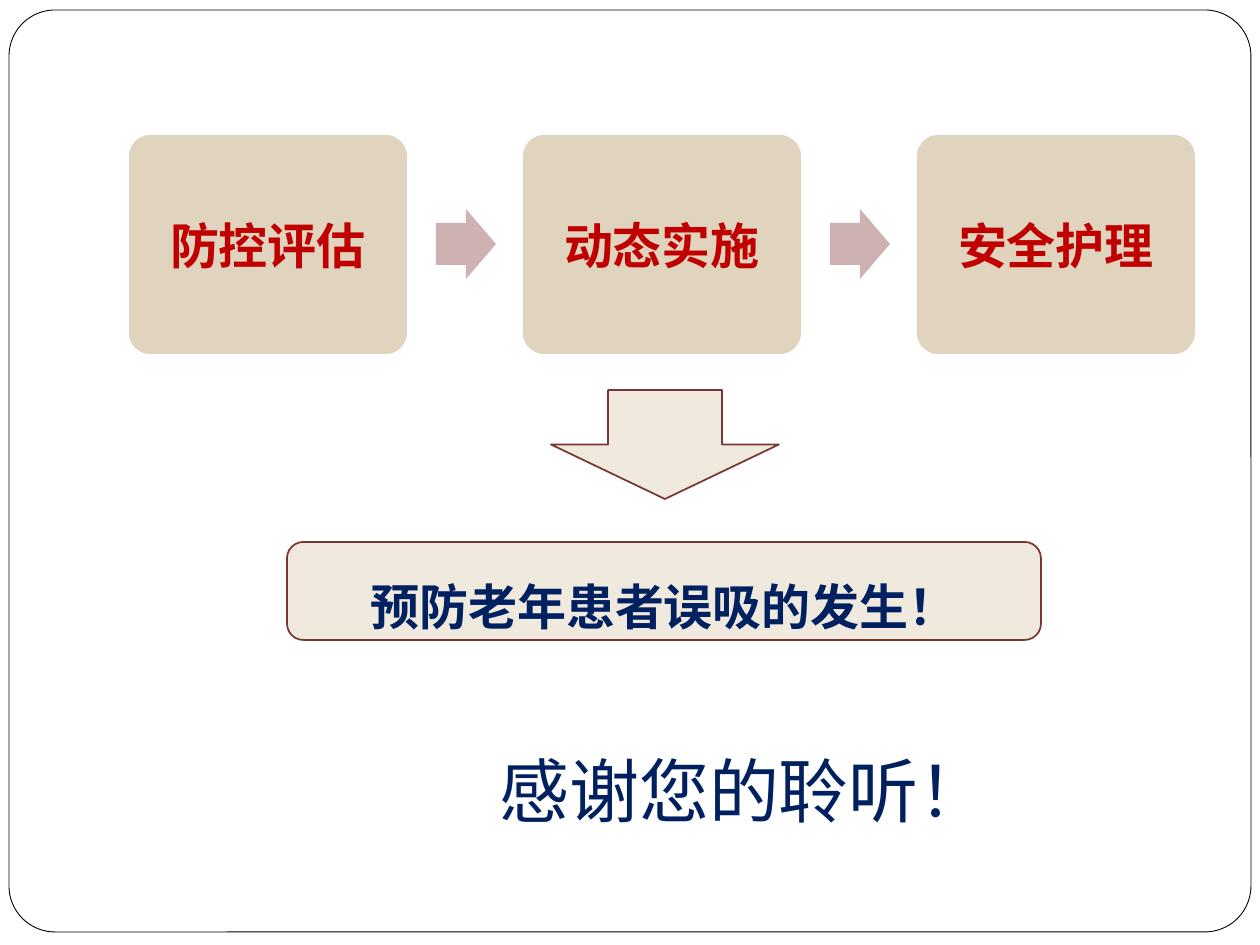
from lxml import etree
from pptx import Presentation, util as u
from pptx.dml.color import RGBColor
from pptx.enum import shapes, text
from pptx.oxml.ns import qn

PX = 914400 / 126
FACE = "Noto Sans CJK SC"
HUES = {"white": "FFFFFF", "black": "000000", "tan": "E0D4BE", "cream": "F0E9DE",
        "rose": "CEB2B1", "brown": "783735", "red": "C00000", "navy": "002060"}
KIND = shapes.MSO_SHAPE


def px(*vals):
    return [round(v * PX) for v in vals]


def hue(name):
    return RGBColor.from_string(HUES[name])


def draw(slide, kind, box, fill, line=None, width=1, adj=()):
    shape = slide.shapes.add_shape(kind, *px(*box))
    shape.shadow.inherit = False
    shape.fill.solid()
    shape.fill.fore_color.rgb = hue(fill)
    if line:
        shape.line.color.rgb = hue(line)
        shape.line.width = u.Pt(width)
    else:
        shape.line.fill.background()
    for i, val in enumerate(adj):
        shape.adjustments[i] = val
    return shape


def write(shape, words, size, color, bold=False):
    frame = shape.text_frame
    frame.word_wrap = True
    para = frame.paragraphs[0]
    para.text = words
    para.alignment = text.PP_ALIGN.CENTER
    font = para.font
    font.name, font.size, font.bold = FACE, u.Pt(size), bold
    font.color.rgb = hue(color)
    latin = para._p.pPr.find(qn("a:defRPr")).find(qn("a:latin"))
    east = etree.Element(qn("a:ea"), typeface=FACE)
    latin.addnext(east)
    return para


def steps(slide, names):
    left, pitch = 128, 394
    for i, name in enumerate(names):
        x = left + i * pitch
        card = draw(slide, KIND.ROUNDED_RECTANGLE, (x, 134, 280, 221),
                    "tan", "white", adj=[0.1])
        write(card, name, 28, "red", True)
        if i < len(names) - 1:
            draw(slide, KIND.RIGHT_ARROW, (x + 308, 209, 60, 70),
                 "rose", adj=[0.6, 0.5])


def main():
    deck = Presentation()
    deck.slide_width, deck.slide_height = px(1260, 945)
    slide = deck.slides.add_slide(deck.slide_layouts[6])
    draw(slide, KIND.ROUNDED_RECTANGLE, (9, 10, 1242, 922),
         "white", "black", 0.5, [0.05])
    steps(slide, ["防控评估", "动态实施", "安全护理"])
    draw(slide, KIND.DOWN_ARROW, (551, 390, 228, 109), "cream", "brown")
    goal = draw(slide, KIND.ROUNDED_RECTANGLE, (287, 542, 754, 98), "cream", "brown")
    write(goal, "预防老年患者误吸的发生！", 28, "navy", True).line_spacing = 1.5
    thanks = slide.shapes.add_textbox(*px(382, 741, 724, 97))
    write(thanks, "感谢您的聆听！", 40, "navy").space_before = u.Pt(5.8)
    deck.save("out.pptx")


if __name__ == "__main__":
    main()
